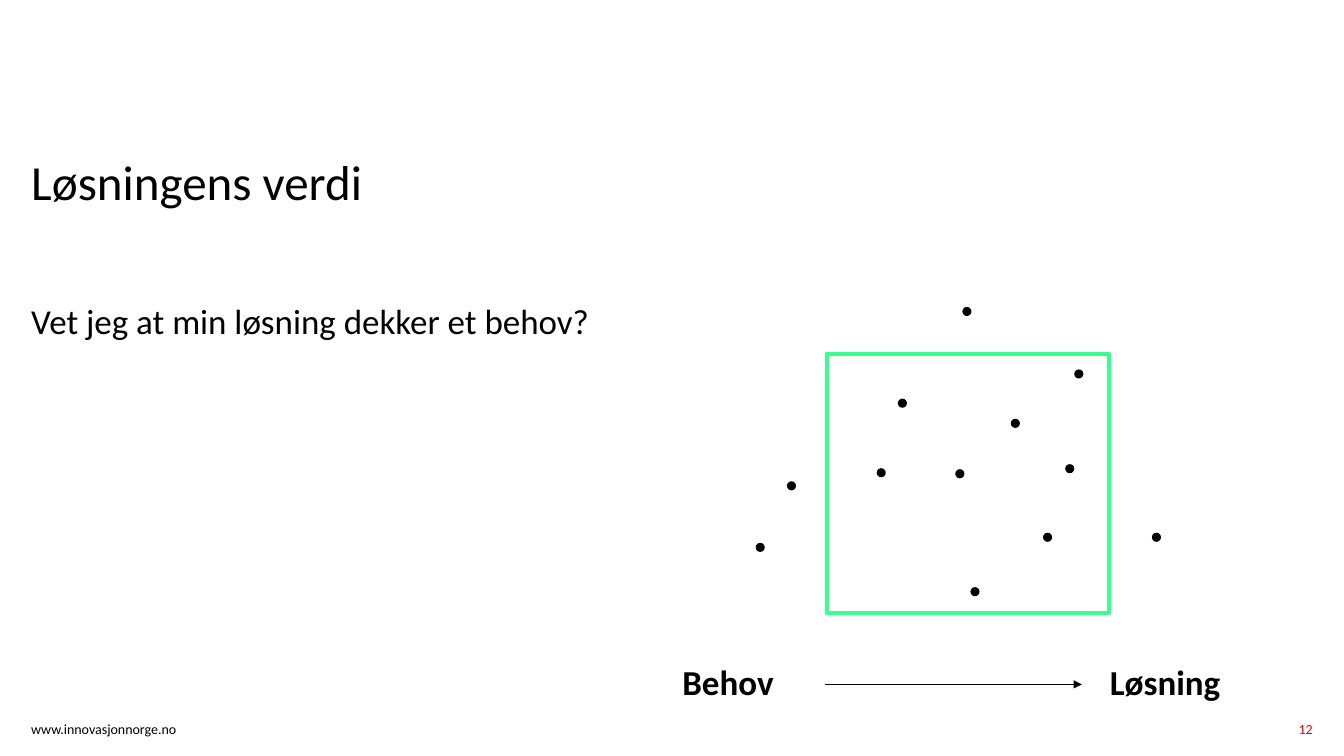
"""Build the slide on the value of the solution, from need to solution."""
from lxml import etree
from pptx import Presentation
from pptx.dml.color import RGBColor
from pptx.enum import shapes, text
from pptx.oxml import ns
from pptx.util import Inches, Pt

BLACK = RGBColor(0x00, 0x00, 0x00)
RED = RGBColor(0xED, 0x00, 0x00)
GREEN = RGBColor(0x3A, 0xFF, 0x8F)
LEFT = text.PP_ALIGN.LEFT
RIGHT = text.PP_ALIGN.RIGHT
DOT = 0.08


def write(words, left, top, width, height, size, box=None, color=BLACK,
          bold=False, align=LEFT, space=1.0, pad=(0, 0), wrap=True):
    """Put one formatted line of text in a box or placeholder."""
    place = [Inches(n) for n in (left, top, width, height)]
    box = box or slide.shapes.add_textbox(*place)
    box.left, box.top, box.width, box.height = place
    frame = box.text_frame
    frame.margin_left = frame.margin_right = Inches(pad[0])
    frame.margin_top = frame.margin_bottom = Inches(pad[1])
    frame.vertical_anchor = text.MSO_ANCHOR.TOP
    frame.auto_size = text.MSO_AUTO_SIZE.NONE
    frame.word_wrap = wrap
    line = frame.paragraphs[0]
    line.alignment, line.line_spacing = align, space
    line.space_before = Pt(0)
    run = line.add_run()
    run.text = words
    run.font.name, run.font.size = "Calibri", Pt(size)
    run.font.bold, run.font.color.rgb = bold, color


deck = Presentation()
deck.slide_width, deck.slide_height = Inches(13.33), Inches(7.5)
slide = deck.slides.add_slide(deck.slide_layouts[5])

write("Løsningens verdi", 0.31, 1.57, 5.66, 1.41, 35,
      box=slide.shapes.title, space=0.9)
write("Vet jeg at min løsning dekker et behov?", 0.31, 3.02, 12.71, 1.41, 25,
      space=0.9)
write("www.innovasjonnorge.no", 0.31, 7.15, 2.85, 0.19, 10)
write("12", 11.94, 7.15, 1.08, 0.24, 10, color=RED, align=RIGHT)

frame = slide.shapes.add_shape(shapes.MSO_SHAPE.RECTANGLE, Inches(8.2),
                               Inches(3.51), Inches(2.8), Inches(2.57))
frame.shadow.inherit = False
frame.fill.background()
frame.line.color.rgb, frame.line.width = GREEN, Pt(3)

needs = [(10.03, 4.16), (8.91, 3.96), (9.48, 4.66), (8.7, 4.65),
         (9.55, 3.05), (7.81, 4.78), (10.57, 4.61), (11.43, 5.29),
         (10.35, 5.29), (7.5, 5.39), (9.63, 5.83), (10.66, 3.67)]
for left, top in needs:
    dot = slide.shapes.add_shape(shapes.MSO_SHAPE.OVAL, Inches(left),
                                 Inches(top), Inches(DOT), Inches(DOT))
    dot.shadow.inherit = False
    dot.fill.solid()
    dot.fill.fore_color.rgb = dot.line.color.rgb = BLACK
    dot.line.width = Pt(0.75)

for label, left, width in [("Behov", 6.67, 1.16), ("Løsning", 10.91, 1.41)]:
    write(label, left, 6.5, width, 0.52, 25, bold=True, pad=(0.1, 0.05),
          wrap=False)

arrow = slide.shapes.add_connector(shapes.MSO_CONNECTOR.STRAIGHT, Inches(8.18),
                                   Inches(6.79), Inches(10.73), Inches(6.79))
arrow.line.color.rgb, arrow.line.width = BLACK, Pt(1)
etree.SubElement(arrow.line._get_or_add_ln(), ns.qn("a:tailEnd"),
                 type="triangle")
etree.SubElement(arrow._element.spPr, ns.qn("a:effectLst"))

deck.save("out.pptx")
